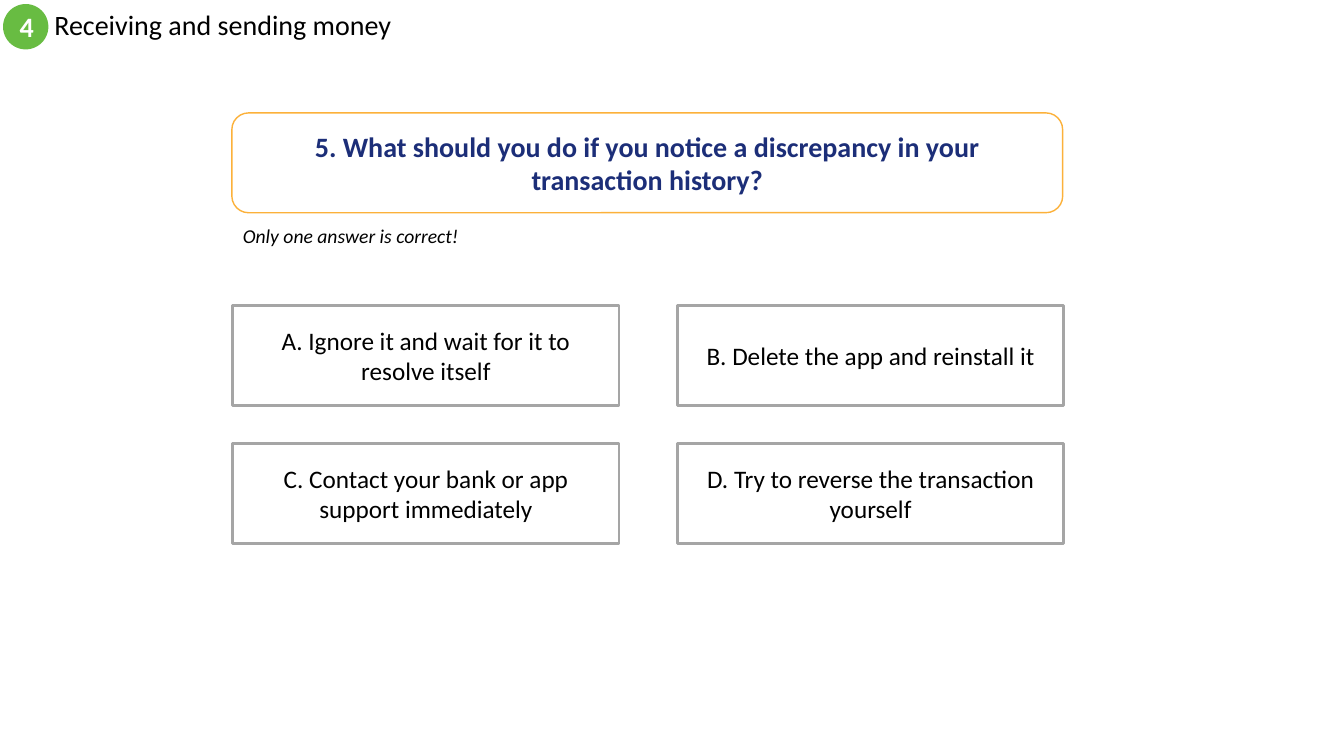
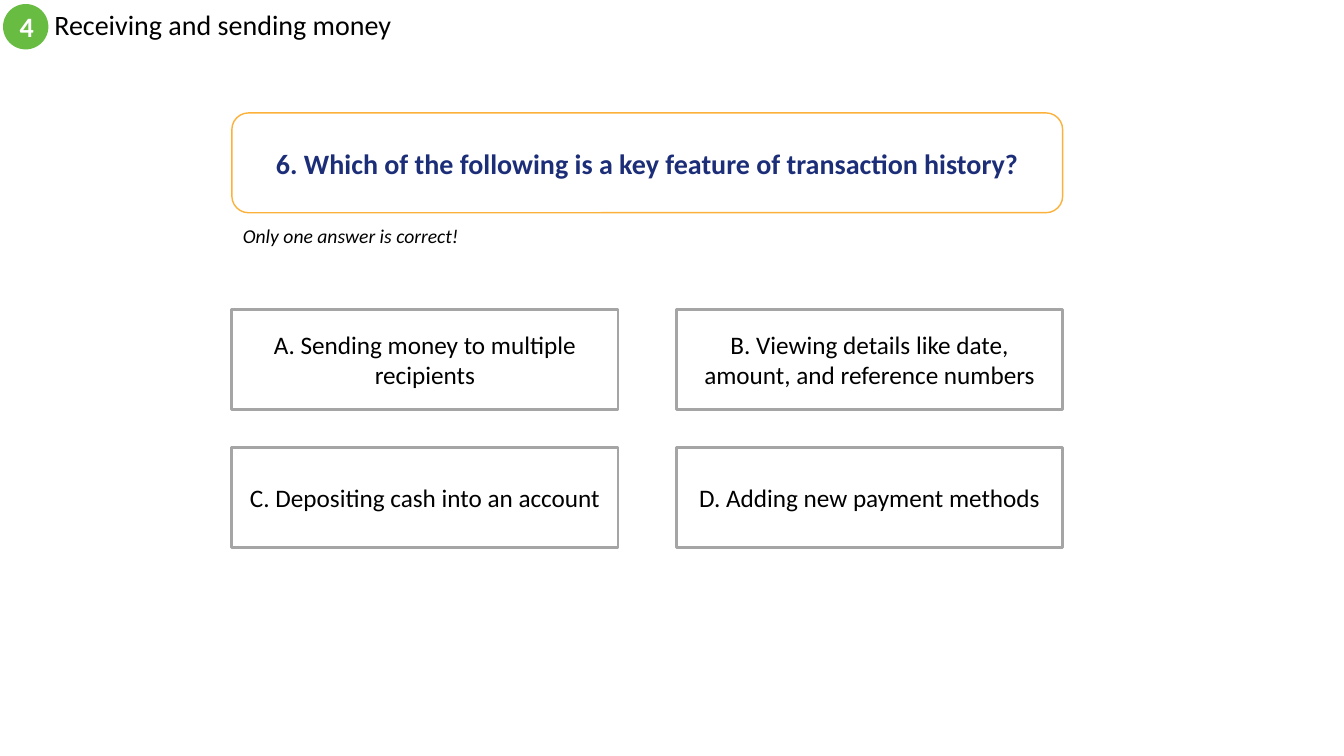
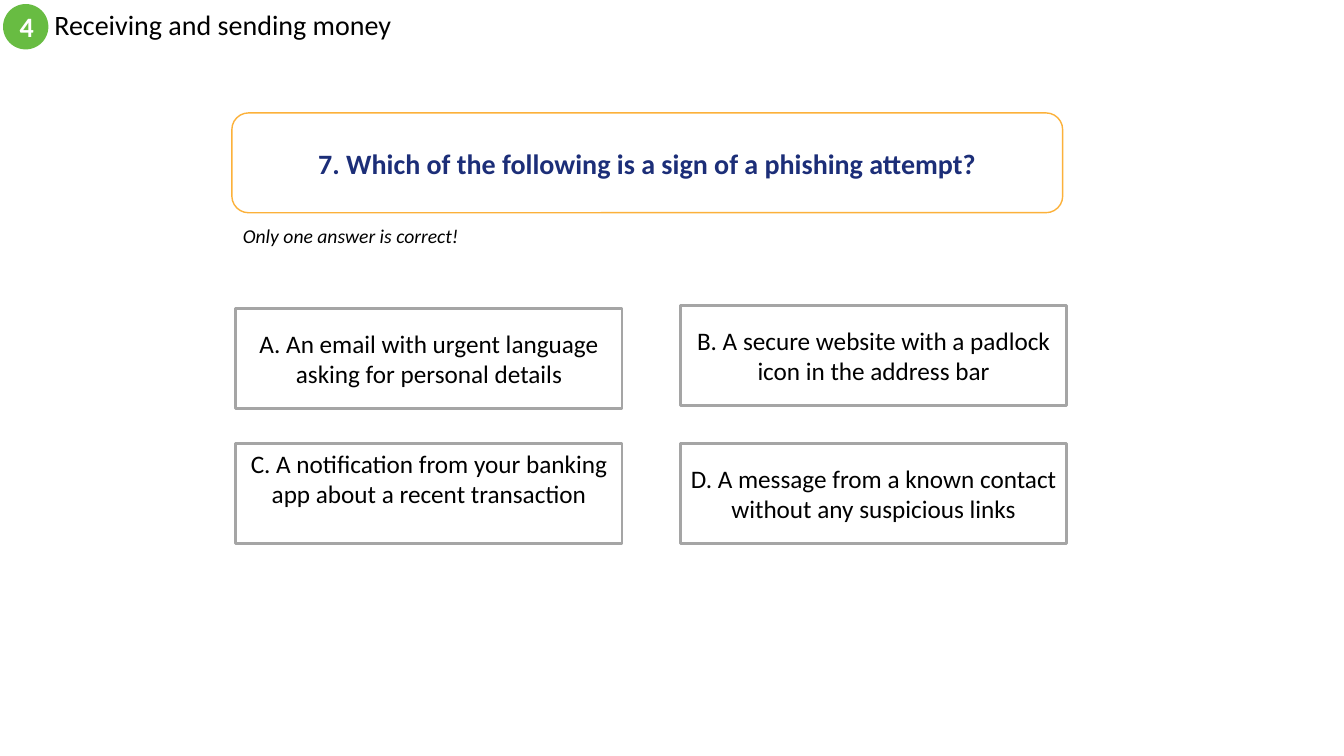
"""Build three quiz slides on receiving and sending money."""
from dataclasses import dataclass

import pptx
import pptx.dml.color
import pptx.enum.shapes
import pptx.enum.text
import pptx.util

Inches = pptx.util.Inches
SHAPE = pptx.enum.shapes.MSO_SHAPE
ALIGN = pptx.enum.text.PP_ALIGN
ANCHOR = pptx.enum.text.MSO_ANCHOR


@dataclass(frozen=True)
class Theme:
    font: str = "Calibri"
    green: str = "68BC42"
    orange: str = "FCB13A"
    navy: str = "1C2E78"
    grey: str = "A5A5A5"
    black: str = "000000"
    white: str = "FFFFFF"
    heading_size: int = 20
    answer_size: int = 18
    hint_size: int = 14


theme = Theme()


def write(box, text, size, color, align=ALIGN.CENTER, anchor=ANCHOR.MIDDLE, bold=False, italic=False):
    frame = box.text_frame
    frame.word_wrap = True
    frame.vertical_anchor = anchor
    paragraph = frame.paragraphs[0]
    paragraph.text = text
    paragraph.alignment = align
    paragraph.font.name = theme.font
    paragraph.font.size = pptx.util.Pt(size)
    paragraph.font.bold = bold
    paragraph.font.italic = italic
    paragraph.font.color.rgb = pptx.dml.color.RGBColor.from_string(color)
    return paragraph


def add_panel(slide, kind, left, top, width, height, fill, line=None, line_width=1):
    panel = slide.shapes.add_shape(kind, Inches(left), Inches(top), Inches(width), Inches(height))
    panel.shadow.inherit = False
    panel.fill.solid()
    panel.fill.fore_color.rgb = pptx.dml.color.RGBColor.from_string(fill)
    if line:
        panel.line.color.rgb = pptx.dml.color.RGBColor.from_string(line)
        panel.line.width = pptx.util.Pt(line_width)
    else:
        panel.line.fill.background()
    return panel


panel_height = 0.99
answer_width = 3.83
column_step = 4.41
row_step = 1.37

quiz = [
    {
        "question": "5. What should you do if you notice a discrepancy in your transaction history?",
        "origin": (2.31, 3.03),
        "answers": [
            "A. Ignore it and wait for it to resolve itself",
            "B. Delete the app and reinstall it",
            "C. Contact your bank or app support immediately",
            "D. Try to reverse the transaction yourself",
        ],
    },
    {
        "question": "6. Which of the following is a key feature of transaction history?",
        "origin": (2.3, 3.07),
        "answers": [
            "A. Sending money to multiple recipients",
            "B. Viewing details like date, amount, and reference numbers",
            "C. Depositing cash into an account",
            "D. Adding new payment methods",
        ],
    },
    {
        "question": "7. Which of the following is a sign of a phishing attempt?",
        "origin": (2.34, 3.03),
        "answers": [
            "A. An email with urgent language asking for personal details",
            "B. A secure website with a padlock icon in the address bar",
            "C. A notification from your banking app about a recent transaction",
            "D. A message from a known contact without any suspicious links",
        ],
        "drops": {0: 0.03},
        "top_aligned": {2},
    },
]

deck = pptx.Presentation()
deck.slide_width = Inches(13.33)
deck.slide_height = Inches(7.5)

for item in quiz:
    slide = deck.slides.add_slide(deck.slide_layouts[6])

    chapter_number = add_panel(slide, SHAPE.OVAL, 0.03, 0.04, 0.45, 0.45, theme.green)
    write(chapter_number, "4", theme.heading_size, theme.white, bold=True)
    chapter_title = slide.shapes.add_textbox(Inches(0.44), Inches(0.04), Inches(8), Inches(0.45))
    heading = write(chapter_title, "Receiving and sending money", theme.heading_size, theme.black, ALIGN.LEFT)
    heading.line_spacing = 0.9

    question = add_panel(slide, SHAPE.ROUNDED_RECTANGLE, 2.3, 1.12, 8.24, panel_height, theme.white, theme.orange)
    write(question, item["question"], theme.heading_size, theme.navy, bold=True)

    hint = slide.shapes.add_textbox(Inches(2.31), Inches(2.17), Inches(2.36), Inches(0.34))
    write(hint, "Only one answer is correct!", theme.hint_size, theme.black, ALIGN.LEFT, ANCHOR.TOP, italic=True)

    left, top = item["origin"]
    for index, answer_text in enumerate(item["answers"]):
        row, column = divmod(index, 2)
        answer_top = top + row * row_step + item.get("drops", {}).get(index, 0)
        answer = add_panel(slide, SHAPE.RECTANGLE, left + column * column_step, answer_top,
                           answer_width, panel_height, theme.white, theme.grey, 2)
        anchor = ANCHOR.TOP if index in item.get("top_aligned", ()) else ANCHOR.MIDDLE
        write(answer, answer_text, theme.answer_size, theme.black, anchor=anchor)

deck.save("out.pptx")
